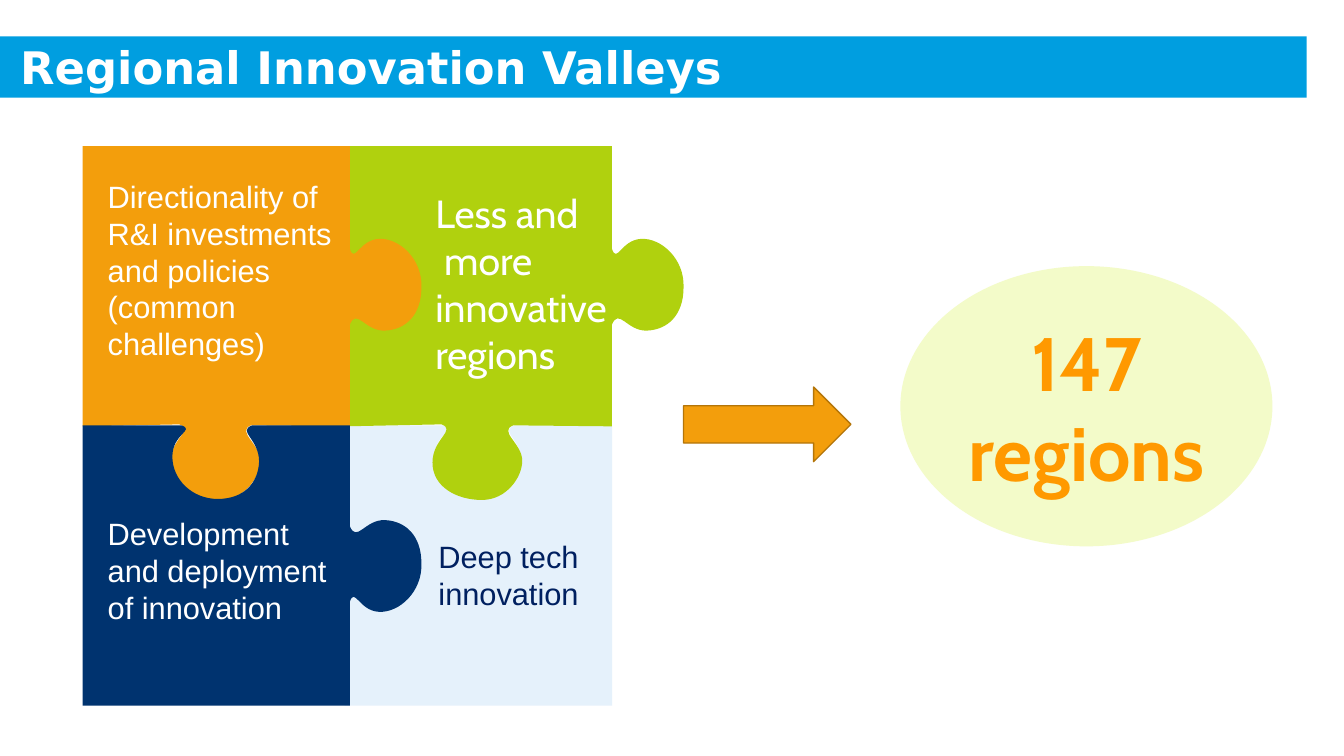
from lxml.etree import SubElement
from pptx import Presentation
from pptx.dml.color import RGBColor
from pptx.enum.shapes import MSO_SHAPE
from pptx.enum.text import MSO_ANCHOR, MSO_AUTO_SIZE, PP_ALIGN
from pptx.oxml.ns import qn
from pptx.util import Inches, Pt

# Content
TITLE = "Regional Innovation Valleys"
RESULT = "147 regions"
COLORS = {
    "orange": "F39E0C", "green": "B0D10E", "navy": "00336F", "ice": "E5F1FB",
    "white": "FFFFFF", "ink": "002060", "arrow_edge": "B47509",
    "banner": "009EE0", "lime": "F3FBC9", "amber": "FF9900",
}
# Puzzle pieces from back to front: fill, column, row, has a right tab
PIECES = [
    ("ice", 1, 1, False),
    ("green", 1, 0, True),
    ("orange", 0, 0, True),
    ("navy", 0, 1, True),
]
# Piece captions: paragraphs, box, font, size, colour
CAPTIONS = [
    (["Directionality of R&I investments and policies", "(common challenges)"],
     (0.97, 1.71, 2.53, 2.32), "Arial", 22, "white"),
    (["Less and", " more innovative regions"],
     (4.22, 1.83, 2.22, 2.46), "Cabin", 28, "white"),
    (["Development and deployment of innovation"],
     (0.97, 5.06, 2.53, 1.21), "Arial", 22, "white"),
    (["Deep tech innovation"],
     (4.25, 5.29, 2.21, 0.84), "Arial", 22, "ink"),
]

# Puzzle geometry
LEFT, TOP, SEAM, BOTTOM = 0.82, 1.45, 4.22, 7.0
PITCH, PIECE_WIDTH, OVERLAP = 2.6, 2.65, 0.01
TAB_CENTRES = (2.85, 5.59)
# Bezier chains: a start point, then three points per curve
SIDE_TAB = [(0, -0.38), (0.05, -0.23), (0.09, -0.47), (0.29, -0.48),
            (0.49, -0.49), (0.72, -0.28), (0.71, 0),
            (0.71, 0.28), (0.55, 0.42), (0.35, 0.43),
            (0.15, 0.44), (0.07, 0.2), (0, 0.37)]
LOWER_TAB = [(1.67, 0), (1.52, 0.06), (1.76, 0.18), (1.76, 0.35),
             (1.76, 0.52), (1.6, 0.74), (1.36, 0.74),
             (1.11, 0.74), (0.87, 0.61), (0.87, 0.37),
             (0.87, 0.13), (1.11, 0.05), (0.96, -0.01)]
SOCKET = [(1.68, 0), (1.53, 0.06), (1.75, 0.13), (1.75, 0.36),
          (1.74, 0.59), (1.58, 0.73), (1.34, 0.73),
          (1.09, 0.73), (0.89, 0.54), (0.89, 0.31),
          (0.89, 0.08), (1.12, 0.05), (0.98, 0)]


def rgb(name):
    return RGBColor.from_string(COLORS[name])


def place(box):
    return [Inches(length) for length in box]


def paint(shape, fill, edge=None):
    shape.shadow.inherit = False
    shape.fill.solid()
    shape.fill.fore_color.rgb = rgb(fill)
    if edge:
        shape.line.color.rgb = rgb(edge)
        shape.line.width = Pt(1)
    else:
        shape.line.fill.background()


def style(paragraph, font_name, size, color, bold=False):
    font = paragraph.font
    font.name, font.size, font.bold = font_name, Pt(size), bold
    font.color.rgb = rgb(color)


def chain_segments(chain, dx, dy, flip=1):
    """Move a Bezier chain; give a line to its start, then its curves."""
    points = [(dx + x, dy + flip * y) for x, y in chain]
    return [points[:1]] + [points[i:i + 3] for i in range(1, len(points), 3)]


def piece_segments(column, row, has_tab):
    """One point per line and three per curve, from the outer left corner."""
    left = LEFT + PITCH * column
    right = left + PIECE_WIDTH
    outer, inner = (BOTTOM, SEAM) if row else (TOP, SEAM + OVERLAP)
    segments = [[(right, outer)]]
    if has_tab:
        segments += chain_segments(SIDE_TAB, right, TAB_CENTRES[row], -1 if row else 1)
    segments.append([(right, inner)])
    segments += chain_segments(SOCKET if row else LOWER_TAB, left, SEAM)
    return segments + [[(left, inner)], [(left, outer)]]


def add_piece(segments):
    points = [place(point) for segment in segments for point in segment]
    builder = shapes.build_freeform(*points[-1])
    builder.add_line_segments(points, close=False)
    piece = builder.convert_to_shape()
    lines = list(piece.element.iter(qn("a:lnTo")))
    outline = lines[0].getparent()
    for segment in segments:
        first, *others = lines[:len(segment)]
        del lines[:len(segment)]
        if others:
            curve = outline.makeelement(qn("a:cubicBezTo"))
            first.addprevious(curve)
            for line in (first, *others):
                curve.append(line[0])
                outline.remove(line)
    SubElement(outline, qn("a:close"))
    return piece


prs = Presentation()
prs.slide_width, prs.slide_height = Inches(13.33), Inches(7.5)
slide = prs.slides.add_slide(prs.slide_layouts[5])
shapes = slide.shapes

# Title as an arrow-shaped banner
title = shapes.title
title.left, title.top, title.width, title.height = place((0, 0.36, 12.96, 0.61))
geometry = SubElement(title.element.spPr, qn("a:prstGeom"), prst="homePlate")
SubElement(geometry, qn("a:avLst"))
paint(title, "banner")
title_frame = title.text_frame
title_frame.text = TITLE
title_frame.auto_size = MSO_AUTO_SIZE.NONE
title_frame.vertical_anchor = MSO_ANCHOR.MIDDLE
title_frame.margin_left = Inches(0.2)
title_line = title_frame.paragraphs[0]
title_line.alignment = PP_ALIGN.LEFT
style(title_line, "DejaVu Sans", 32, "white", bold=True)

# Puzzle
for fill, column, row, has_tab in PIECES:
    paint(add_piece(piece_segments(column, row, has_tab)), fill)

for lines, box, font_name, size, color in CAPTIONS:
    frame = shapes.add_textbox(*place(box)).text_frame
    frame.word_wrap = True
    frame.auto_size = MSO_AUTO_SIZE.SHAPE_TO_FIT_TEXT
    frame.text = "\n".join(lines)
    for paragraph in frame.paragraphs:
        style(paragraph, font_name, size, color)

# Arrow to the result
arrow = shapes.add_shape(MSO_SHAPE.RIGHT_ARROW, *place((6.78, 3.84, 1.66, 0.74)))
paint(arrow, "orange", "arrow_edge")

result = shapes.add_shape(MSO_SHAPE.OVAL, *place((8.93, 2.64, 3.69, 2.78)))
paint(result, "lime")
result.text_frame.text = RESULT
result.text_frame.vertical_anchor = MSO_ANCHOR.MIDDLE
result_line = result.text_frame.paragraphs[0]
result_line.alignment = PP_ALIGN.CENTER
style(result_line, "Cabin", 54, "amber", bold=True)

prs.save("out.pptx")
